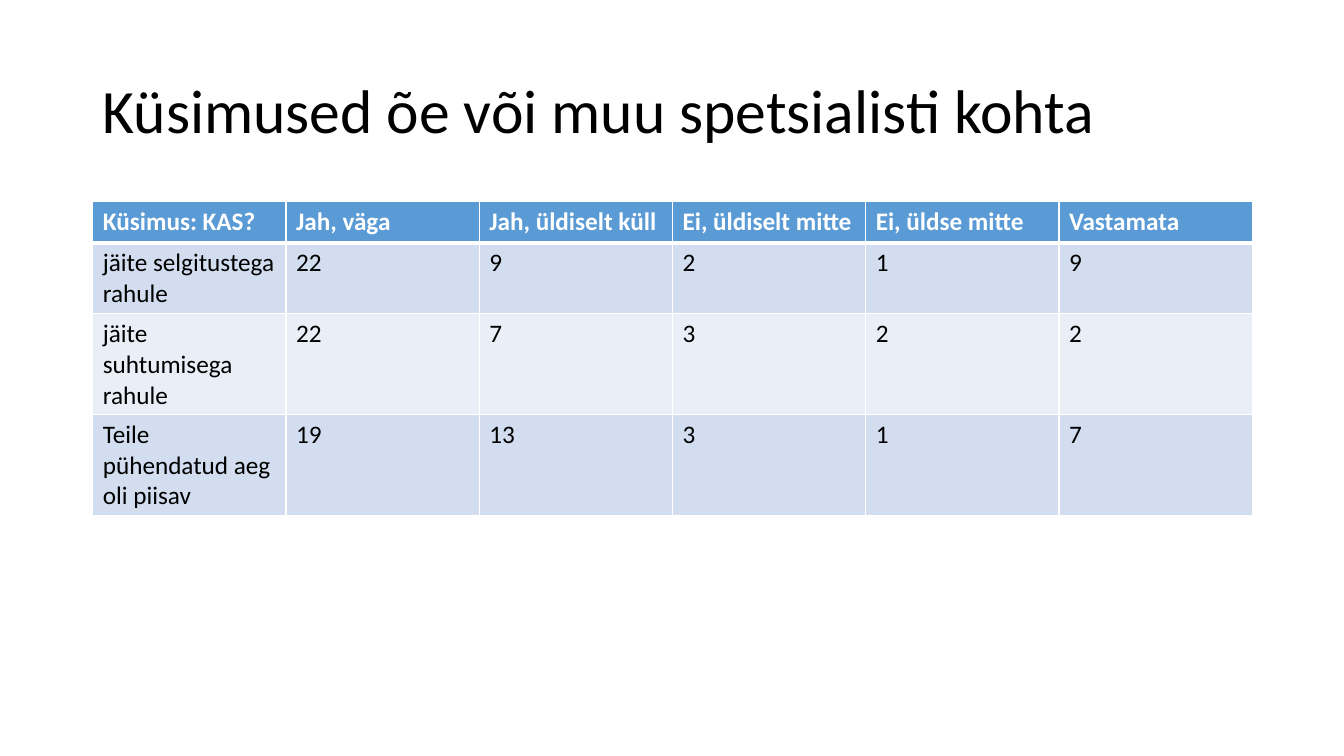
from lxml import etree
from pptx import Presentation
from pptx.dml.color import RGBColor
from pptx.enum.text import MSO_ANCHOR
from pptx.oxml.ns import qn
from pptx.util import Inches, Pt

MIDDLE = MSO_ANCHOR.MIDDLE
FONT = "Calibri"
COLORS = {
    "text": "000000",
    "white": "FFFFFF",
    "header": "5B9BD5",
    "odd_row": "D2DEEF",
    "even_row": "EAEFF7",
}
TITLE = "Küsimused õe või muu spetsialisti kohta"
ANSWERS = [
    ["Küsimus: KAS?", "Jah, väga", "Jah, üldiselt küll", "Ei, üldiselt mitte",
     "Ei, üldse mitte", "Vastamata"],
    ["jäite selgitustega rahule", "22", "9", "2", "1", "9"],
    ["jäite suhtumisega rahule", "22", "7", "3", "2", "2"],
    ["Teile pühendatud aeg oli piisav", "19", "13", "3", "1", "7"],
]
ROW_HEIGHT = 0.41


def write_text(frame, text, size=18, color="text", bold=False, line_spacing=1.0):
    """Put one formatted paragraph into a text frame."""
    paragraph = frame.paragraphs[0]
    paragraph.line_spacing = line_spacing
    run = paragraph.add_run()
    run.text = text
    run.font.name = FONT
    run.font.size = Pt(size)
    run.font.bold = bold
    run.font.color.rgb = RGBColor.from_string(COLORS[color])


def add_borders(cell, top=1, bottom=1):
    """Give a cell white borders, with widths in points."""
    properties = cell._tc.get_or_add_tcPr()
    for side, width in (("L", 1), ("R", 1), ("T", top), ("B", bottom)):
        line = etree.SubElement(properties, qn(f"a:ln{side}"), w=str(Pt(width)))
        fill = etree.SubElement(line, qn("a:solidFill"))
        etree.SubElement(fill, qn("a:srgbClr"), val=COLORS["white"])


def add_title(slide, left, top, width, height):
    """Add the slide heading, centred vertically in its box."""
    heading = slide.shapes.add_textbox(
        Inches(left), Inches(top), Inches(width), Inches(height)).text_frame
    heading.word_wrap = True
    heading.vertical_anchor = MIDDLE
    write_text(heading, TITLE, size=44, line_spacing=0.9)


def add_answer_table(slide, left, top, width):
    """Add the table of answer counts with a header and banded rows."""
    table = slide.shapes.add_table(
        len(ANSWERS), len(ANSWERS[0]), Inches(left), Inches(top),
        Inches(width), Inches(ROW_HEIGHT * len(ANSWERS))).table
    for row, answers in enumerate(ANSWERS):
        is_header = row == 0
        band = "header" if is_header else "odd_row" if row % 2 else "even_row"
        for column, answer in enumerate(answers):
            cell = table.cell(row, column)
            add_borders(cell, top=3 if row == 1 else 1, bottom=3 if is_header else 1)
            cell.fill.solid()
            cell.fill.fore_color.rgb = RGBColor.from_string(COLORS[band])
            write_text(cell.text_frame, answer, bold=is_header,
                       color="white" if is_header else "text")


def main():
    """Build the survey slide and save it."""
    presentation = Presentation()
    presentation.slide_width = Inches(13.33)
    presentation.slide_height = Inches(7.5)
    slide = presentation.slides.add_slide(presentation.slide_layouts[6])
    add_title(slide, 0.92, 0.4, 11.5, 1.45)
    add_answer_table(slide, 0.92, 2, 11.5)
    presentation.save("out.pptx")


if __name__ == "__main__":
    main()
